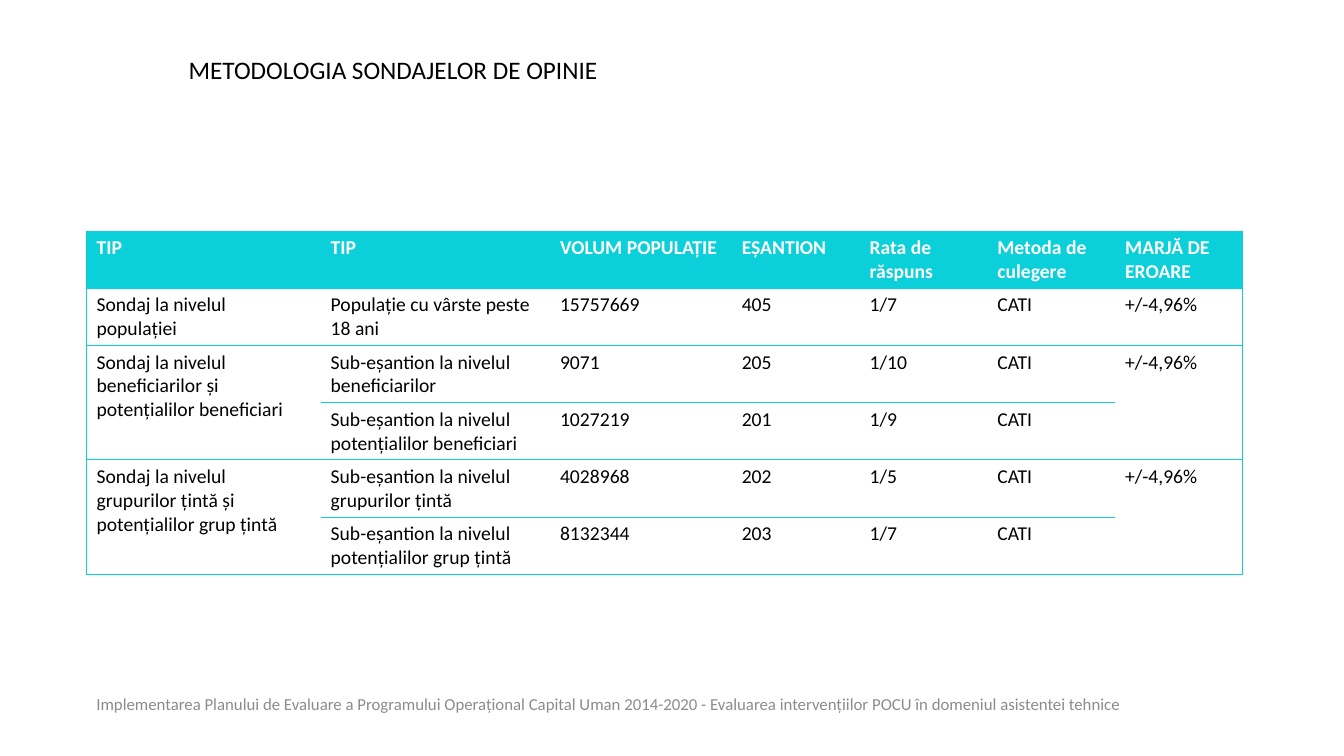
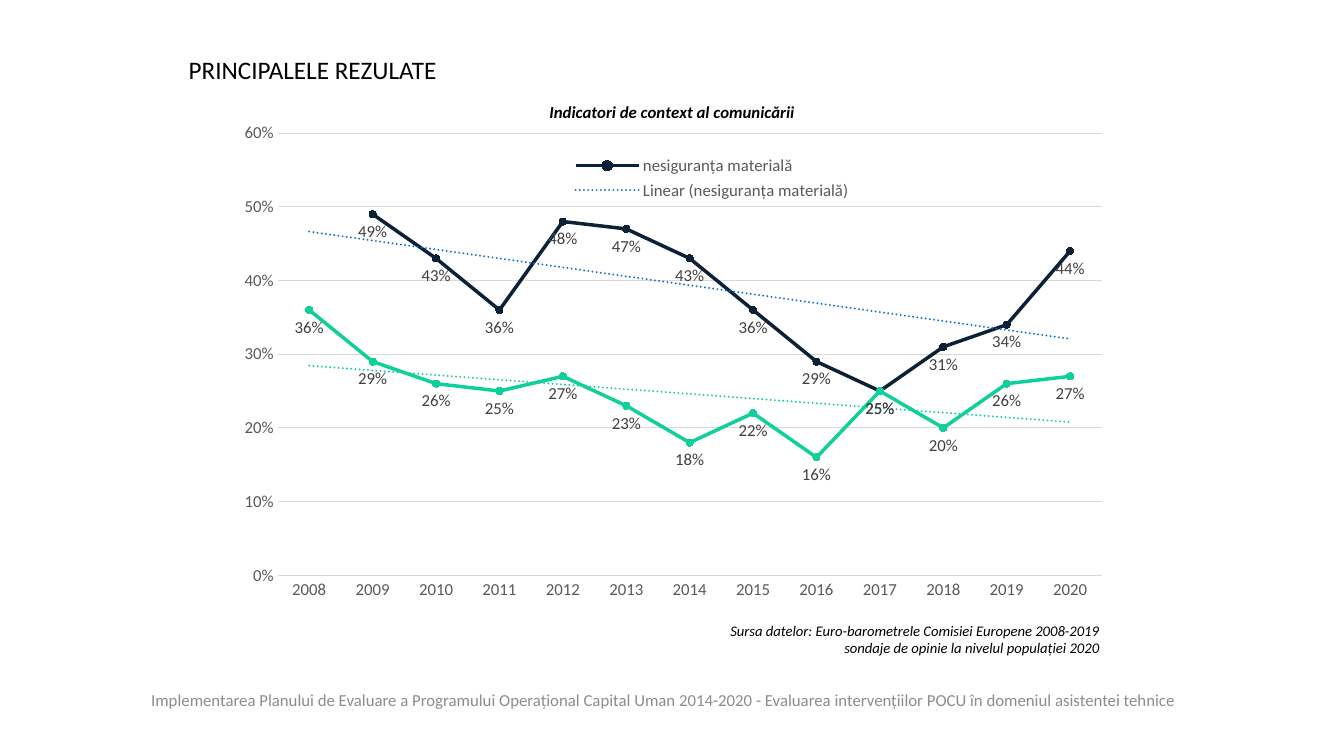
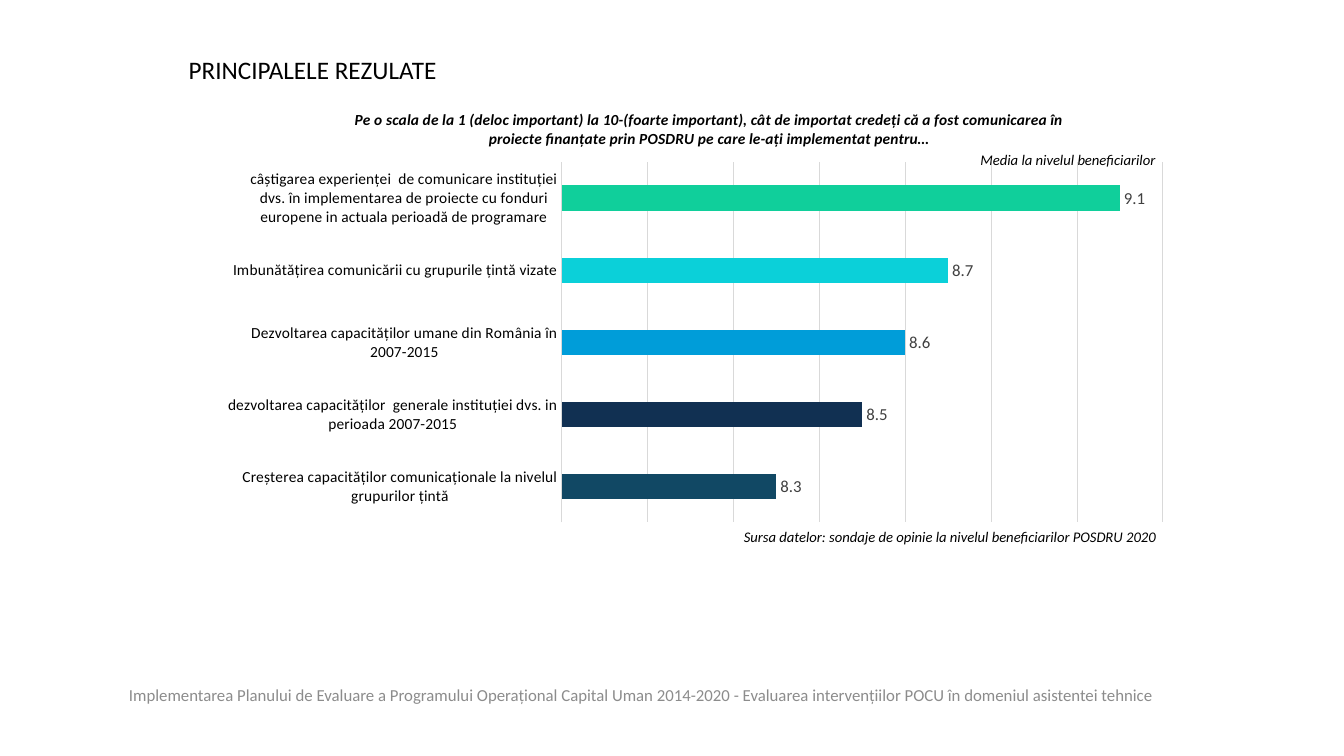
import pptx
import pptx.chart.data
import pptx.dml.color
import pptx.enum.chart
import pptx.enum.text
import pptx.oxml
import pptx.oxml.ns
import pptx.util

Cm, Pt = pptx.util.Cm, pptx.util.Pt
RGB = pptx.dml.color.RGBColor.from_string
qn = pptx.oxml.ns.qn
Align, Anchor = pptx.enum.text.PP_ALIGN, pptx.enum.text.MSO_ANCHOR
Kind, Tick = pptx.enum.chart.XL_CHART_TYPE, pptx.enum.chart.XL_TICK_MARK
Spot = pptx.enum.chart.XL_LABEL_POSITION


class Theme:
    font = "Calibri"
    black, white = RGB("000000"), RGB("FFFFFF")
    foot, rule, axis, label = RGB("8C8C8C"), RGB("D9D9D9"), RGB("595959"), RGB("404040")
    cyan, navy, green, blue = "0BD0D9", "0C2036", "10CF9B", "0F6FC6"
    bars = ["10CF9B", "0BD0D9", "009DD9", "113052", "114864"]
    head, cell, body, small, note = Pt(18), Pt(14), Pt(12), Pt(11), Pt(10.5)
    base = Pt(10)


def write(frame, text, size, color=Theme.black, align=Align.LEFT, bold=False, italic=False):
    """Fill a text frame, one paragraph for each line."""
    for i, line in enumerate(text.split("\n")):
        para = frame.add_paragraph() if i else frame.paragraphs[0]
        para.alignment = align
        run = para.add_run()
        run.text = line
        font = run.font
        font.name, font.size, font.bold, font.italic = Theme.font, size, bold, italic
        font.color.rgb = color


def place(node, at, spot, inner=False):
    """Set the place of a chart part, in shares of the chart."""
    for old in node.findall(qn("c:layout")):
        node.remove(old)
    tags = '<c:layoutTarget val="inner"/>' if inner else ""
    tags += '<c:xMode val="edge"/><c:yMode val="edge"/>'
    tags += "".join(f'<c:{key} val="{val}"/>' for key, val in zip("xywh", spot))
    node.insert(at, pptx.oxml.parse_xml(
        f'<c:layout {pptx.oxml.ns.nsdecls("c")}><c:manualLayout>{tags}</c:manualLayout></c:layout>'))


deck = pptx.Presentation()
deck.slide_width, deck.slide_height = Cm(33.87), Cm(19.05)

# Slides with title and footer
footer = ("Implementarea Planului de Evaluare a Programului Operațional Capital Uman 2014-2020"
          " - Evaluarea intervențiilor POCU în domeniul asistentei tehnice")
plan = [
    ("METODOLOGIA SONDAJELOR DE OPINIE", (2.18, 17.06, 29.16, 1.35)),
    ("PRINCIPALELE REZULATE", (3.56, 17.13, 26.82, 1.02)),
    ("PRINCIPALELE REZULATE", (3, 16.9, 27.84, 1.24)),
]
slides = []
for head, spot in plan:
    slide = deck.slides.add_slide(deck.slide_layouts[5])
    title = slide.shapes.title
    title.left, title.top, title.width, title.height = Cm(4.5), Cm(1.24), Cm(18.2), Cm(1.02)
    frame = title.text_frame
    frame.auto_size = pptx.enum.text.MSO_AUTO_SIZE.NONE
    frame.vertical_anchor = Anchor.TOP
    write(frame, head, Theme.head)
    frame = slide.shapes.add_textbox(*map(Cm, spot)).text_frame
    frame.word_wrap = True
    frame.vertical_anchor = Anchor.MIDDLE
    write(frame, footer, Theme.body, Theme.foot)
    slides.append(slide)

# Survey table
rows = [
    ["TIP", "TIP", "VOLUM POPULAȚIE", "EȘANTION", "Rata de răspuns",
     "Metoda de culegere", "MARJĂ DE EROARE"],
    ["Sondaj la nivelul populației", "Populație cu vârste peste 18 ani",
     "15757669", "405", "1/7", "CATI", "+/-4,96%"],
    ["Sondaj la nivelul beneficiarilor și potențialilor beneficiari",
     "Sub-eșantion la nivelul beneficiarilor", "9071", "205", "1/10", "CATI", "+/-4,96%"],
    ["", "Sub-eșantion la nivelul potențialilor beneficiari",
     "1027219", "201", "1/9", "CATI", ""],
    ["Sondaj la nivelul grupurilor țintă și potențialilor grup țintă",
     "Sub-eșantion la nivelul grupurilor țintă", "4028968", "202", "1/5", "CATI", "+/-4,96%"],
    ["", "Sub-eșantion la nivelul potențialilor grup țintă",
     "8132344", "203", "1/7", "CATI", ""],
]
wide = [5.9, 5.78, 4.58, 3.22, 3.22, 3.22, 3.22]
last = len(wide) - 1
table = slides[0].shapes.add_table(
    len(rows), len(wide), Cm(2.18), Cm(5.82), Cm(sum(wide)), Cm(8.64)).table
table.horz_banding = False
# The plain style has neither fill nor grid
table._tbl.tblPr.find(qn("a:tableStyleId")).text = "{2D5ABB26-0587-4C30-8999-92F81FD0307C}"
for col, width in zip(table.columns, wide):
    col.width = Cm(width)
for r, row in enumerate(rows):
    table.rows[r].height = Cm(1.44)
    for c, text in enumerate(row):
        cell = table.cell(r, c)
        # Outer frame, and a line under each row
        for side, drawn in (("L", c == 0), ("R", c == last), ("T", r == 0), ("B", True)):
            if drawn:
                cell._tc.get_or_add_tcPr().append(pptx.oxml.parse_xml(
                    f'<a:ln{side} {pptx.oxml.ns.nsdecls("a")} w="6350"><a:solidFill>'
                    f'<a:srgbClr val="{Theme.cyan}"/></a:solidFill></a:ln{side}>'))
        if r == 0:
            cell.fill.solid()
            cell.fill.fore_color.rgb = RGB(Theme.cyan)
        else:
            cell.fill.background()
        if text:
            write(cell.text_frame, text, Theme.cell,
                  Theme.black if r else Theme.white, bold=r == 0)
for r in (2, 4):
    for c in (0, last):
        table.cell(r, c).merge(table.cell(r + 1, c))

# Chart data
trend = pptx.chart.data.CategoryChartData(number_format="0%")
trend.categories = [str(year) for year in range(2008, 2021)]
trend.add_series("nesiguranța materială", [
    None, 0.49, 0.43, 0.36, 0.48, 0.47, 0.43, 0.36, 0.29, 0.25, 0.31, 0.34, 0.44])
trend.add_series("", [
    0.36, 0.29, 0.26, 0.25, 0.27, 0.23, 0.18, 0.22, 0.16, 0.25, 0.2, 0.26, 0.27])
score = pptx.chart.data.CategoryChartData(number_format="0.0")
score.categories = [
    "câștigarea experienței  de comunicare instituției dvs. în implementarea de proiecte"
    " cu fonduri europene in actuala perioadă de programare",
    "Imbunătățirea comunicării cu grupurile țintă vizate",
    "Dezvoltarea capacităților umane din România în 2007-2015",
    "dezvoltarea capacităților  generale instituției dvs. in perioada 2007-2015",
    "Creșterea capacităților comunicaționale la nivelul grupurilor țintă",
]
score.add_series("", [9.1, 8.7, 8.6, 8.5, 8.3])

# Both charts: title, axes and labels
specs = [
    dict(slide=slides[1], kind=Kind.LINE_MARKERS, data=trend, spot=(5.64, 2, 22.58, 15.06),
         title="Indicatori de context al comunicării", size=Theme.body, head=(0.36, 0.03),
         plot=(0.06, 0.09, 0.92, 0.74), form="0%", scale=(0, 0.6, 0.1),
         axis=(Theme.body, Theme.axis), label=Spot.BELOW),
    dict(slide=slides[2], kind=Kind.BAR_CLUSTERED, data=score, spot=(5.74, 2.36, 24.05, 10.82),
         title="Pe o scala de la 1 (deloc important) la 10-(foarte important), cât de importat"
               " credeți că a fost comunicarea în proiecte finanțate prin POSDRU pe care"
               " le-ați implementat pentru…",
         size=Theme.small, head=(0.13, 0.03), plot=(0.35, 0.16, 0.63, 0.84),
         form="0.0", scale=(7.8, 9.2, 0.2),
         axis=(Theme.small, Theme.black), label=Spot.OUTSIDE_END),
]
charts = []
for item in specs:
    chart = item["slide"].shapes.add_chart(
        item["kind"], *map(Cm, item["spot"]), item["data"]).chart
    chart.font.name, chart.font.size = Theme.font, Theme.base
    chart.has_title, chart.has_legend = True, False
    write(chart.chart_title.text_frame, item["title"], item["size"],
          align=Align.CENTER, bold=True, italic=True)
    place(chart.chart_title._element, 1, item["head"])
    place(chart._chartSpace.chart.plotArea, 0, item["plot"], inner=True)
    cat, val = chart.category_axis, chart.value_axis
    for axis in (cat, val):
        axis.major_tick_mark = axis.minor_tick_mark = Tick.NONE
        font = axis.tick_labels.font
        font.name, font.size, font.color.rgb = Theme.font, item["axis"][0], item["axis"][1]
    val.minimum_scale, val.maximum_scale, val.major_unit = item["scale"]
    val.tick_labels.number_format = item["form"]
    val.tick_labels.number_format_is_linked = False
    val.has_major_gridlines = True
    for line in (cat.format.line, val.major_gridlines.format.line):
        line.color.rgb, line.width = Theme.rule, Pt(0.75)
    val.format.line.fill.background()
    chart.plots[0].vary_by_categories = False
    for series in chart.plots[0].series:
        labels = series.data_labels
        labels.show_value, labels.position = True, item["label"]
        labels.number_format, labels.number_format_is_linked = item["form"], False
        font = labels.font
        font.name, font.size, font.color.rgb = Theme.font, Theme.body, Theme.label
    charts.append(chart)
lines, bars = charts

# Line chart: series, trend lines and legend
for series, color, dots in zip(lines.plots[0].series, (Theme.navy, Theme.green),
                               (Theme.blue, Theme.green)):
    series.smooth = False
    series.format.line.color.rgb, series.format.line.width = RGB(color), Pt(2.5)
    mark = series.marker
    mark.style, mark.size = pptx.enum.chart.XL_MARKER_STYLE.CIRCLE, 5
    mark.format.fill.solid()
    mark.format.fill.fore_color.rgb = RGB(color)
    mark.format.line.color.rgb = RGB(color)
    series._element.find(qn("c:cat")).addprevious(pptx.oxml.parse_xml(
        f'<c:trendline {pptx.oxml.ns.nsdecls("c", "a")}><c:spPr><a:ln w="19050" cap="rnd">'
        f'<a:solidFill><a:srgbClr val="{dots}"/></a:solidFill><a:prstDash val="sysDot"/></a:ln>'
        '</c:spPr><c:trendlineType val="linear"/><c:dispRSqr val="0"/><c:dispEq val="0"/>'
        '</c:trendline>'))
lines.has_legend = True
key = lines.legend
key.position = pptx.enum.chart.XL_LEGEND_POSITION.BOTTOM
key.include_in_layout = False
key.font.name, key.font.size, key.font.color.rgb = Theme.font, Theme.body, Theme.axis
# Only the first series and its trend are listed
for at, entry in enumerate((1, 3), 1):
    key._element.insert(at, pptx.oxml.parse_xml(
        f'<c:legendEntry {pptx.oxml.ns.nsdecls("c")}><c:idx val="{entry}"/>'
        '<c:delete val="1"/></c:legendEntry>'))
place(key._element, 3, (0.38, 0.12, 0.33, 0.09))

# Bar chart: one colour for each bar
bars.plots[0].gap_width = 182
bars.category_axis.reverse_order = True
bars.value_axis.visible = False
for i, color in enumerate(Theme.bars):
    fill = bars.plots[0].series[0].points[i].format.fill
    fill.solid()
    fill.fore_color.rgb = RGB(color)

# Notes beside the charts
notes = [
    (slides[1], "Sursa datelor: Euro-barometrele Comisiei Europene 2008-2019\n"
                "sondaje de opinie la nivelul populației 2020", (14.45, 15.54, 13.51, 1.14)),
    (slides[2], "Media la nivelul beneficiarilor", (19.18, 3.68, 10.19, 0.71)),
    (slides[2], "Sursa datelor: sondaje de opinie la nivelul beneficiarilor POSDRU 2020",
     (18.34, 13.18, 11.05, 0.71)),
]
for slide, text, spot in notes:
    frame = slide.shapes.add_textbox(*map(Cm, spot)).text_frame
    frame.word_wrap = True
    write(frame, text, Theme.note, align=Align.RIGHT, italic=True)

deck.save("out.pptx")
